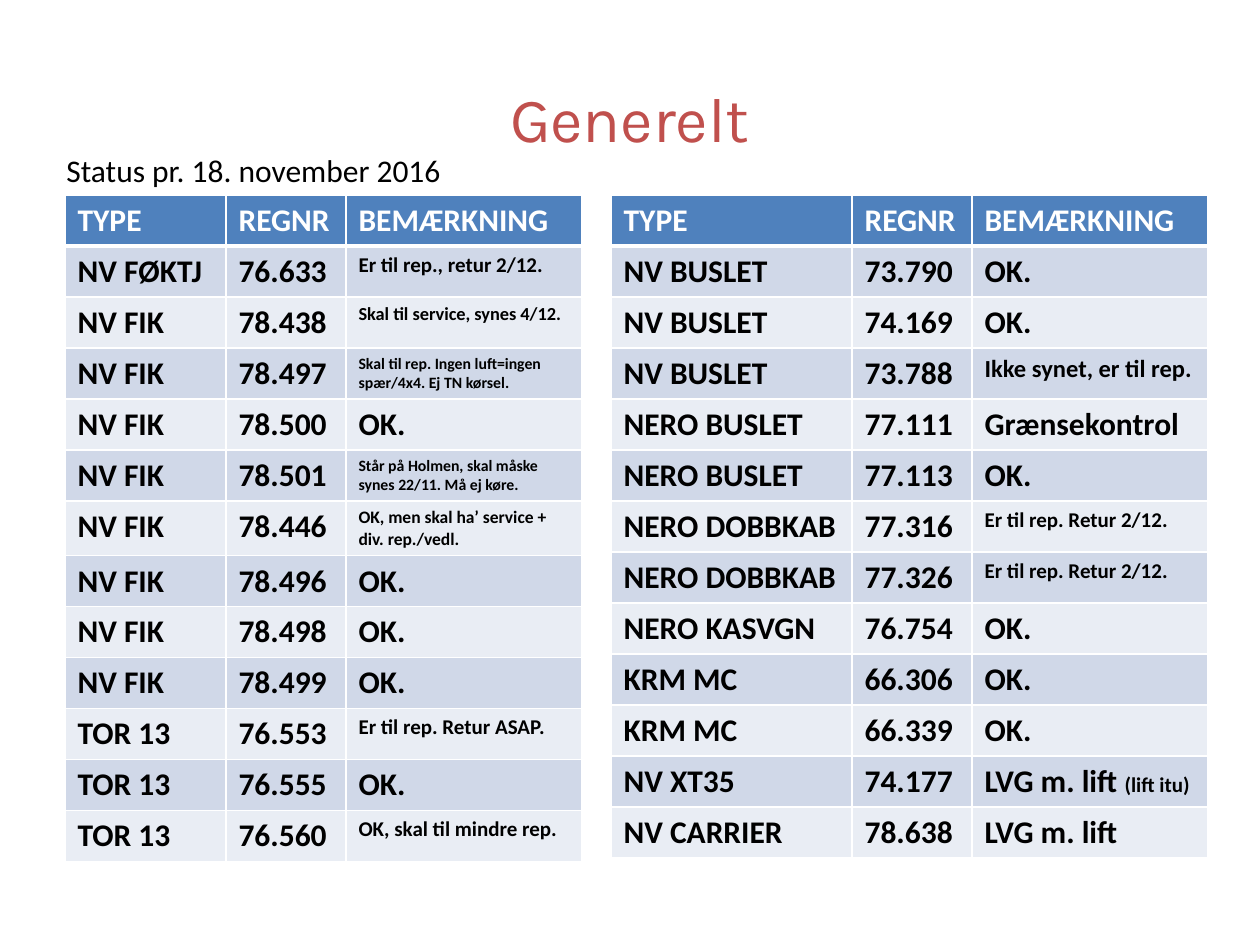
"""Build the vehicle status slide with two fleet tables."""
from dataclasses import dataclass
from typing import NamedTuple

from lxml import etree
from pptx import Presentation, util as u
from pptx.dml.color import RGBColor
from pptx.enum import text
from pptx.oxml import ns

EMU_PER_PX = 914400 / 126


@dataclass(frozen=True)
class Theme:
    title_font: str = "Karla"
    body_font: str = "Calibri"
    title: str = "C0504D"
    ink: str = "000000"
    white: str = "FFFFFF"
    header: str = "4F81BD"
    bands: tuple[str, str] = ("D0D8E8", "E9EDF4")
    title_size: float = 36
    body_size: float = 18
    rule: float = 1
    header_rule: float = 3


THEME = Theme()


class Run(NamedTuple):
    text: str
    size: float = THEME.body_size


class Box(NamedTuple):
    left: int
    top: int
    width: int
    height: int


class Vehicle(NamedTuple):
    type: str
    regnr: str
    remark: tuple[Run, ...] = (Run("OK."),)


@dataclass(frozen=True)
class Fleet:
    left: int
    type_width: int
    vehicles: tuple[Vehicle, ...]


HEADER = Vehicle("TYPE", "REGNR", (Run("BEMÆRKNING"),))
TABLE_TOP, ROW_HEIGHT, REGNR_WIDTH, REMARK_WIDTH = 195, 51, 120, 236

FLEETS = (
    Fleet(65, 161, (
        Vehicle("NV FØKTJ", "76.633", (Run("Er til rep., retur 2/12.", 12),)),
        Vehicle("NV FIK", "78.438", (Run("Skal til service, synes 4/12.", 10.5),)),
        Vehicle("NV FIK", "78.497", (Run("Skal til rep. Ingen luft=ingen spær/4x4. Ej TN kørsel.", 9),)),
        Vehicle("NV FIK", "78.500"),
        Vehicle("NV FIK", "78.501", (Run("Står på Holmen, skal måske synes 22/11. Må ej køre.", 9),)),
        Vehicle("NV FIK", "78.446", (Run("OK, men skal ha’ service + div. rep./vedl.", 10),)),
        Vehicle("NV FIK", "78.496"),
        Vehicle("NV FIK", "78.498"),
        Vehicle("NV FIK", "78.499"),
        Vehicle("TOR 13", "76.553", (Run("Er til rep. Retur ASAP.", 12),)),
        Vehicle("TOR 13", "76.555"),
        Vehicle("TOR 13", "76.560", (Run("OK, skal til mindre rep.", 12),)),
    )),
    Fleet(611, 241, (
        Vehicle("NV BUSLET", "73.790"),
        Vehicle("NV BUSLET", "74.169"),
        Vehicle("NV BUSLET", "73.788", (Run("Ikke synet, er til rep.", 14),)),
        Vehicle("NERO BUSLET", "77.111", (Run("Grænsekontrol"),)),
        Vehicle("NERO BUSLET", "77.113"),
        Vehicle("NERO DOBBKAB", "77.316", (Run("Er til rep. Retur 2/12.", 12),)),
        Vehicle("NERO DOBBKAB", "77.326", (Run("Er til rep. Retur 2/12.", 12),)),
        Vehicle("NERO KASVGN", "76.754"),
        Vehicle("KRM MC", "66.306"),
        Vehicle("KRM MC", "66.339"),
        Vehicle("NV XT35", "74.177", (Run("LVG m. lift "), Run("(lift itu)", 12))),
        Vehicle("NV CARRIER", "78.638", (Run("LVG m. lift"),)),
    )),
)


def px(n: int) -> u.Emu:
    return u.Emu(round(n * EMU_PER_PX))


def write(p, runs: tuple[Run, ...], color: str, font: str = THEME.body_font, bold: bool = False) -> None:
    p.font.size = u.Pt(runs[0].size)
    fonts = [p.font]
    for run in runs:
        r = p.add_run()
        r.text = run.text
        r.font.size = u.Pt(run.size)
        fonts.append(r.font)
    for f in fonts:
        f.name, f.bold = font, bold
        f.color.rgb = RGBColor.from_string(color)


def add_label(s, box: Box, run: Run, color: str, font: str):
    tf = s.shapes.add_textbox(*map(px, box)).text_frame
    tf.word_wrap = True
    write(tf.paragraphs[0], (run,), color, font)
    return tf


def set_borders(cell, top: float, bottom: float) -> None:
    tc_pr = cell._tc.get_or_add_tcPr()
    widths = {"lnL": THEME.rule, "lnR": THEME.rule, "lnT": top, "lnB": bottom}
    for i, (side, width) in enumerate(widths.items()):
        ln = etree.Element(ns.qn(f"a:{side}"), w=str(u.Pt(width)))
        fill = etree.SubElement(ln, ns.qn("a:solidFill"))
        etree.SubElement(fill, ns.qn("a:srgbClr"), val=THEME.white)
        tc_pr.insert(i, ln)


def add_fleet(s, fleet: Fleet) -> None:
    rows = (HEADER, *fleet.vehicles)
    widths = (fleet.type_width, REGNR_WIDTH, REMARK_WIDTH)
    box = Box(fleet.left, TABLE_TOP, sum(widths), ROW_HEIGHT * len(rows))
    table = s.shapes.add_table(len(rows), len(widths), *map(px, box)).table
    table.first_row = table.horz_banding = False
    for column, width in zip(table.columns, widths):
        column.width = px(width)
    for i, vehicle in enumerate(rows):
        table.rows[i].height = px(ROW_HEIGHT)
        fill = THEME.bands[(i - 1) % 2] if i else THEME.header
        color = THEME.ink if i else THEME.white
        top = THEME.header_rule if i == 1 else THEME.rule
        bottom = THEME.rule if i else THEME.header_rule
        contents = ((Run(vehicle.type),), (Run(vehicle.regnr),), vehicle.remark)
        for cell, runs in zip(table.rows[i].cells, contents):
            cell.fill.solid()
            cell.fill.fore_color.rgb = RGBColor.from_string(fill)
            set_borders(cell, top, bottom)
            write(cell.text_frame.paragraphs[0], runs, color, bold=True)


def main() -> None:
    prs = Presentation()
    prs.slide_width, prs.slide_height = px(1260), px(945)
    s = prs.slides.add_slide(prs.slide_layouts[6])
    tf = add_label(s, Box(63, 38, 1134, 158), Run("Generelt", THEME.title_size), THEME.title, THEME.title_font)
    tf.vertical_anchor = text.MSO_ANCHOR.MIDDLE
    tf.paragraphs[0].alignment = text.PP_ALIGN.CENTER
    for fleet in FLEETS:
        add_fleet(s, fleet)
    add_label(s, Box(54, 145, 427, 50), Run("Status pr. 18. november 2016"), THEME.ink, THEME.body_font)
    prs.save("out.pptx")


if __name__ == "__main__":
    main()
